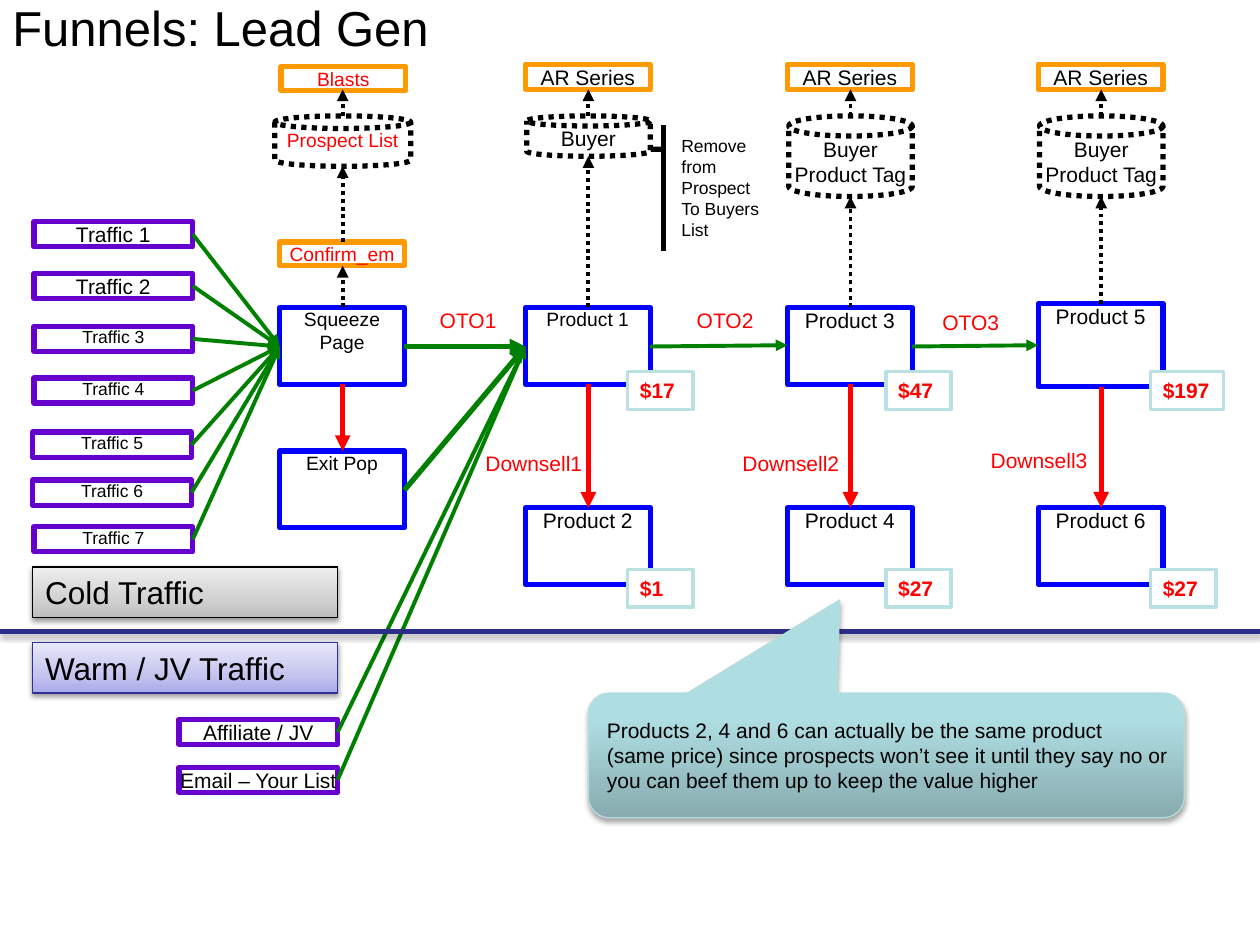
from dataclasses import dataclass
from typing import Optional

from lxml import etree
from pptx import Presentation, util as u
from pptx.dml.color import RGBColor
from pptx.enum import dml, shapes, text
from pptx.oxml import ns

BLACK = RGBColor(0x00, 0x00, 0x00)
WHITE = RGBColor(0xFF, 0xFF, 0xFF)
RED = RGBColor(0xFF, 0x00, 0x00)
BLUE = RGBColor(0x00, 0x00, 0xFF)
GREEN = RGBColor(0x00, 0x80, 0x00)
PURPLE = RGBColor(0x66, 0x00, 0xCC)
ORANGE = RGBColor(0xFF, 0x99, 0x00)
TEAL = RGBColor(0xBB, 0xE0, 0xE3)
TEAL_EDGE = RGBColor(0xB6, 0xDC, 0xDF)
NAVY = RGBColor(0x2D, 0x2D, 0x8A)
INDIGO = RGBColor(0x2F, 0x2F, 0x98)

# Gradients run from bottom to top: (percent, colour)
GREY_FADE = ((0, "BDBDBD"), (35, "D1D1D1"), (100, "EEEEEE"))
LILAC_FADE = ((0, "A9A9E9"), (35, "C4C4EF"), (100, "E8E8FA"))
TEAL_FADE = ((0, "87ABAE"), (80, "AFDEE2"), (100, "AFE0E4"))

SHAPE = shapes.MSO_SHAPE
ALIGN = text.PP_ALIGN
ANCHOR = text.MSO_ANCHOR


@dataclass(frozen=True)
class Style:
    edge: Optional[RGBColor] = None  # None makes a plain text box
    weight: float = 3
    color: RGBColor = BLACK
    align: ALIGN = ALIGN.LEFT
    anchor: ANCHOR = ANCHOR.TOP
    padded: bool = True
    wrap: bool = True
    bold: bool = False
    dotted: bool = False
    preset: SHAPE = SHAPE.RECTANGLE
    adjust: tuple = ()
    fade: tuple = ()
    shadow: tuple = ()  # opacity in percent, distance in points


@dataclass(frozen=True)
class Arrow:
    color: RGBColor
    weight: float = 2.25
    dotted: bool = False
    head: bool = True
    shadow: tuple = ()


@dataclass(frozen=True)
class Stage:
    left: float
    top: float
    height: float
    upper: str
    upper_size: int
    lower: str
    prices: tuple
    price_left: float
    list_name: str
    list_height: float
    offer_at: tuple
    downsell_at: tuple


TITLE = Style(anchor=ANCHOR.MIDDLE)
OFFER = Style(color=RED, align=ALIGN.CENTER)
DOWNSELL = Style(color=RED, align=ALIGN.RIGHT)
PAGE = Style(BLUE, align=ALIGN.CENTER, padded=False)
TRAFFIC = Style(PURPLE, align=ALIGN.CENTER, padded=False, wrap=False)
SERIES = Style(ORANGE, align=ALIGN.CENTER, padded=False)
LEAD_MAIL = Style(ORANGE, color=RED, align=ALIGN.CENTER, padded=False)
BUYERS = Style(BLACK, align=ALIGN.CENTER, padded=False, dotted=True, preset=SHAPE.CAN)
PROSPECTS = Style(BLACK, color=RED, align=ALIGN.CENTER, padded=False, wrap=False,
                  dotted=True, preset=SHAPE.CAN)
PRICE = Style(TEAL, 2, RED, bold=True)
COLD = Style(BLACK, 0.75, fade=GREY_FADE, shadow=(38, 1.6))
WARM = Style(INDIGO, 0.75, fade=LILAC_FADE, shadow=(38, 1.6))
REMOVAL = Style(BLACK, anchor=ANCHOR.MIDDLE, wrap=False,
                preset=SHAPE.LINE_CALLOUT_1_ACCENT_BAR,
                adjust=(0.195, -0.068, 0.194, -0.211))
NOTE = Style(TEAL_EDGE, 0.75, anchor=ANCHOR.MIDDLE, wrap=False,
             preset=SHAPE.ROUNDED_RECTANGULAR_CALLOUT,
             adjust=(-0.078, -1.246, 0.167), fade=TEAL_FADE, shadow=(35, 1.8))

FLOW = Arrow(GREEN)
MAIN_FLOW = Arrow(GREEN, 3)
DECLINE = Arrow(RED, 3)
MAILING = Arrow(BLACK, dotted=True)
DIVIDER = Arrow(NAVY, 3, head=False, shadow=(35, 1.8))


def inch(value: float) -> u.Cm:
    return u.Cm(value * 2.54)


def add_node(parent, tag: str, **attributes):
    return etree.SubElement(parent, ns.qn(tag), attributes)


def add_shadow(effects, opacity: float, distance: float) -> None:
    outer = add_node(effects, "a:outerShdw", blurRad=str(u.Pt(3.1)),
                     dist=str(u.Pt(distance)), dir="5400000", rotWithShape="0")
    tone = add_node(outer, "a:srgbClr", val=str(BLACK))
    add_node(tone, "a:alpha", val=str(opacity * 1000))


def paint(shape, style: Style) -> None:
    if style.fade:
        shape.fill.gradient()
        shape.fill.gradient_angle = 90
        stops = shape._element.spPr.find(".//" + ns.qn("a:gsLst"))
        stops.clear()
        for percent, tone in style.fade:
            stop = add_node(stops, "a:gs", pos=str(percent * 1000))
            add_node(stop, "a:srgbClr", val=tone)
    else:
        shape.fill.solid()
        shape.fill.fore_color.rgb = WHITE
    shape.line.color.rgb = style.edge
    shape.line.width = u.Pt(style.weight)
    if style.dotted:
        shape.line.dash_style = dml.MSO_LINE.ROUND_DOT
    for index, value in enumerate(style.adjust):
        shape.adjustments[index] = value
    shape.shadow.inherit = False
    if style.shadow:
        add_shadow(shape._element.spPr.find(ns.qn("a:effectLst")), *style.shadow)


def box(slide, words: str, at: tuple, style: Style, size: float = 12) -> None:
    area = [inch(value) for value in at]
    if style.edge is None:
        shape = slide.shapes.add_textbox(*area)
    else:
        shape = slide.shapes.add_shape(style.preset, *area)
        paint(shape, style)
    frame = shape.text_frame
    frame.word_wrap = style.wrap
    frame.vertical_anchor = style.anchor
    if not style.padded:
        frame.margin_left = frame.margin_right = u.Cm(0)
        frame.margin_top = frame.margin_bottom = u.Cm(0)
    paragraph = frame.paragraphs[0]
    paragraph.alignment = style.align
    for index, line in enumerate(words.split("\n")):
        if index:
            paragraph.add_line_break()
        run = paragraph.add_run()
        run.text = line
        run.font.name = "Arial"
        run.font.size = u.Pt(size)
        run.font.bold = style.bold
        run.font.color.rgb = style.color


def connect(slide, start: tuple, end: tuple, arrow: Arrow) -> None:
    link = slide.shapes.add_connector(shapes.MSO_CONNECTOR.STRAIGHT,
                                      *(inch(value) for value in start + end))
    link.line.color.rgb = arrow.color
    link.line.width = u.Pt(arrow.weight)
    if arrow.dotted:
        link.line.dash_style = dml.MSO_LINE.ROUND_DOT
    if arrow.head:
        add_node(link.line._get_or_add_ln(), "a:tailEnd", type="triangle")
    effects = add_node(link._element.spPr, "a:effectLst")
    if arrow.shadow:
        add_shadow(effects, *arrow.shadow)


STAGES = (
    Stage(4.17, 2.44, 0.61, "Product 1", 11, "Product 2", ("$17", "$1"), 4.98,
          "Buyer", 0.32, (3.09, 2.39), (3.09, 3.53)),
    Stage(6.25, 2.44, 0.61, "Product 3", 12, "Product 4", ("$47", "$27"), 7.03,
          "Buyer Product Tag", 0.64, (5.13, 2.39), (5.13, 3.53)),
    Stage(8.24, 2.41, 0.66, "Product 5", 12, "Product 6", ("$197", "$27"), 9.13,
          "Buyer Product Tag", 0.64, (7.08, 2.41), (7.1, 3.5)),
)
# Left, top and text size of Traffic 1 to 7
SOURCES = ((0.27, 1.76, 12), (0.27, 2.17, 12), (0.27, 2.59, 10), (0.27, 3, 10),
           (0.26, 3.43, 10), (0.26, 3.81, 10), (0.27, 4.18, 10))
PARTNERS = (("Affiliate / JV", 5.71), ("Email – Your List", 6.09))
FLOW_Y, CAN_TOP, SERIES_BOTTOM, LOWER_TOP = 2.75, 0.92, 0.71, 4.03
LEAD_LEFT, LEAD_MID, LEAD_RIGHT = 2.22, 2.72, 3.21


def draw_stage(slide, number: int, stage: Stage) -> None:
    middle, bottom = stage.left + 0.5, stage.top + stage.height
    box(slide, stage.upper, (stage.left, stage.top, 0.99, stage.height), PAGE, stage.upper_size)
    box(slide, stage.lower, (stage.left, LOWER_TOP, 0.99, 0.61), PAGE)
    box(slide, stage.list_name, (stage.left + 0.01, CAN_TOP, 0.98, stage.list_height), BUYERS)
    box(slide, "AR Series", (stage.left, 0.51, 0.99, 0.2), SERIES)
    connect(slide, (middle, stage.top), (middle, CAN_TOP + stage.list_height), MAILING)
    connect(slide, (middle, CAN_TOP), (middle, SERIES_BOTTOM), MAILING)
    connect(slide, (middle, bottom), (middle, LOWER_TOP), DECLINE)
    box(slide, f"OTO{number}", (*stage.offer_at, 1.25, 0.3), OFFER)
    box(slide, f"Downsell{number}", (*stage.downsell_at, 1.63, 0.3), DOWNSELL)
    for price, top in zip(stage.prices, (2.95, 4.52)):
        width = 0.58 if len(price) > 3 else 0.52
        box(slide, price, (stage.price_left, top, width, 0.3), PRICE)


def main() -> None:
    deck = Presentation()
    deck.slide_width, deck.slide_height = inch(10), inch(7.5)
    slide = deck.slides.add_slide(deck.slide_layouts[6])
    box(slide, "Funnels: Lead Gen", (0, -0.07, 8.21, 0.57), TITLE, 28)

    # Lead capture column
    box(slide, "Squeeze Page", (LEAD_LEFT, 2.44, 0.99, 0.61), PAGE, 11)
    box(slide, "Exit Pop", (LEAD_LEFT, 3.58, 0.99, 0.61), PAGE, 11)
    box(slide, "Confirm_em", (LEAD_LEFT, 1.92, 0.99, 0.19), LEAD_MAIL, 11)
    box(slide, "Prospect List", (2.18, CAN_TOP, 1.08, 0.4), PROSPECTS, 11)
    box(slide, "Blasts", (2.23, 0.53, 0.99, 0.19), LEAD_MAIL, 11)
    for start, end in ((CAN_TOP, SERIES_BOTTOM), (1.92, 1.32), (2.44, 2.11)):
        connect(slide, (LEAD_MID, start), (LEAD_MID, end), MAILING)
    connect(slide, (LEAD_MID, 3.05), (LEAD_MID, 3.58), DECLINE)

    # Traffic sources
    for number, (left, top, size) in enumerate(SOURCES, 1):
        box(slide, f"Traffic {number}", (left, top, 1.26, 0.2), TRAFFIC, size)
        connect(slide, (left + 1.26, top + 0.1), (LEAD_LEFT, FLOW_Y), FLOW)

    # Product stages and the flow between them
    box(slide, "Remove \nfrom \nProspect\nTo Buyers \nList", (5.31, 0.99, 0.69, 1), REMOVAL, 10)
    for number, stage in enumerate(STAGES, 1):
        draw_stage(slide, number, stage)
    for origin, target in zip(STAGES, STAGES[1:]):
        connect(slide, (origin.left + 0.99, FLOW_Y), (target.left, 2.74), FLOW)
    first_offer = (STAGES[0].left, FLOW_Y)
    for start_y in (FLOW_Y, 3.89):
        connect(slide, (LEAD_RIGHT, start_y), first_offer, MAIN_FLOW)
    for partner, top in PARTNERS:
        box(slide, partner, (1.42, top, 1.26, 0.2), TRAFFIC)
        connect(slide, (2.68, top + 0.1), first_offer, FLOW)

    # Cold and warm halves, with the closing note
    connect(slide, (0, 5.01), (10, 5.01), DIVIDER)
    box(slide, "Cold Traffic", (0.26, 4.5, 2.42, 0.4), COLD, 18)
    box(slide, "Warm / JV Traffic", (0.26, 5.1, 2.42, 0.4), WARM, 18)
    box(slide, "Products 2, 4 and 6 can actually be the same product \n"
               "(same price) since prospects won’t see it until they say no or \n"
               "you can beef them up to keep the value higher", (4.67, 5.5, 4.73, 0.99), NOTE)
    deck.save("out.pptx")


if __name__ == "__main__":
    main()
